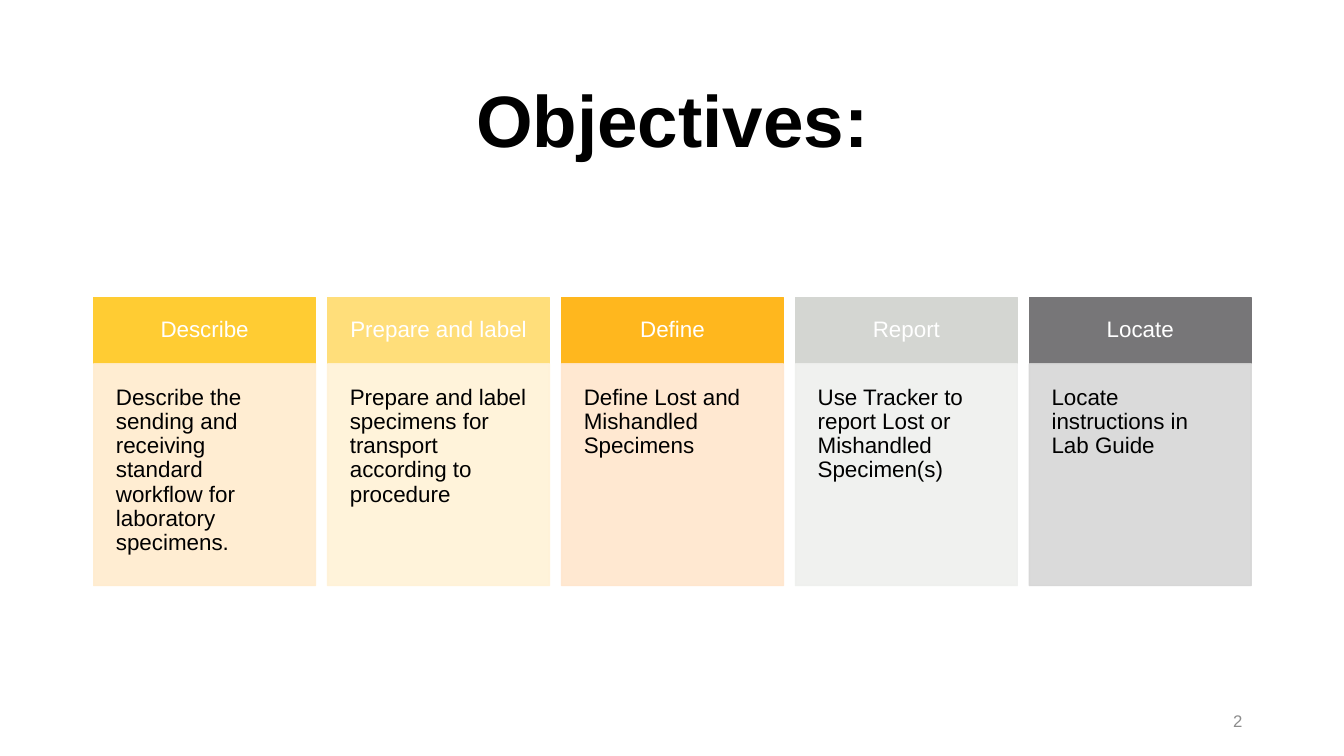
"""Build the Objectives slide: five headed columns under a title."""
import pptx
import pptx.dml.color
import pptx.enum.shapes
import pptx.enum.text
import pptx.oxml
import pptx.oxml.ns
import pptx.util

Inches = pptx.util.Inches
Pt = pptx.util.Pt
ALIGN = pptx.enum.text.PP_ALIGN
ANCHOR = pptx.enum.text.MSO_ANCHOR

LEFT, PITCH, COLUMN_WIDTH = 0.93, 2.32, 2.2
HEADER_TOP, HEADER_HEIGHT, BODY_HEIGHT = 2.95, 0.66, 2.2

OBJECTIVES = [
    ("Describe", "Describe the sending and receiving standard workflow for laboratory specimens.",
     "FFCC33", "FFECCE"),
    ("Prepare and label", "Prepare and label specimens for transport according to procedure",
     "FFDE7A", "FFF2D7"),
    ("Define", "Define Lost and Mishandled Specimens", "FFB71E", "FFE6CD"),
    ("Report", "Use Tracker to report Lost or Mishandled Specimen(s)", "D4D6D2", "EFF0EE"),
    ("Locate", "Locate instructions in Lab Guide", "777678", "D6D6D6"),
]


def paint(color_format, color):
    color_format.rgb = pptx.dml.color.RGBColor.from_string(color)


def write(shape, text, size, color, align, anchor, inset=None, bold=False, spacing=0.9):
    frame = shape.text_frame
    frame.word_wrap = True
    frame.vertical_anchor = anchor
    if inset is not None:
        frame.margin_left = frame.margin_right = Inches(inset)
        frame.margin_top = frame.margin_bottom = Inches(inset)
    paragraph = frame.paragraphs[0]
    paragraph.text = text
    paragraph.alignment = align
    paragraph.line_spacing = spacing
    paragraph.font.name = "Arial"
    paragraph.font.size = Pt(size)
    paragraph.font.bold = bold
    paint(paragraph.font.color, color)


def add_label(slide, box, *text, **style):
    label = slide.shapes.add_textbox(*map(Inches, box))
    write(label, *text, **style)


def add_panel(slide, box, color, opacity=100):
    panel = slide.shapes.add_shape(pptx.enum.shapes.MSO_SHAPE.RECTANGLE, *map(Inches, box))
    panel.shadow.inherit = False
    panel.fill.solid()
    paint(panel.fill.fore_color, color)
    panel.line.width = Pt(1)
    paint(panel.line.color, color)
    if opacity < 100:
        for tint in panel.element.spPr.iter(pptx.oxml.ns.qn("a:srgbClr")):
            alpha = pptx.oxml.parse_xml(
                f'<a:alpha {pptx.oxml.ns.nsdecls("a")} val="{opacity * 1000}"/>')
            tint.append(alpha)
    return panel


def add_objective(slide, column, heading, detail, header_color, body_color):
    left = LEFT + column * PITCH
    body_top = HEADER_TOP + HEADER_HEIGHT
    header = add_panel(slide, (left, HEADER_TOP, COLUMN_WIDTH, HEADER_HEIGHT), header_color)
    write(header, heading, 16, "FFFFFF", ALIGN.CENTER, ANCHOR.MIDDLE, inset=0.17)
    body = add_panel(slide, (left, body_top, COLUMN_WIDTH, BODY_HEIGHT), body_color, opacity=90)
    write(body, detail, 16, "000000", ALIGN.LEFT, ANCHOR.TOP, inset=0.22)


def main():
    deck = pptx.Presentation()
    deck.slide_width, deck.slide_height = Inches(13.33), Inches(7.5)
    slide = deck.slides.add_slide(deck.slide_layouts[6])
    add_label(slide, (0.92, 0.61, 11.5, 1.24), "Objectives:", 52, "000000",
              ALIGN.CENTER, ANCHOR.MIDDLE, bold=True)
    add_label(slide, (9.42, 6.95, 3, 0.4), "2", 12, "8C8C8C",
              ALIGN.RIGHT, ANCHOR.MIDDLE, spacing=1.0)
    for column, objective in enumerate(OBJECTIVES):
        add_objective(slide, column, *objective)
    deck.save("out.pptx")


if __name__ == "__main__":
    main()
